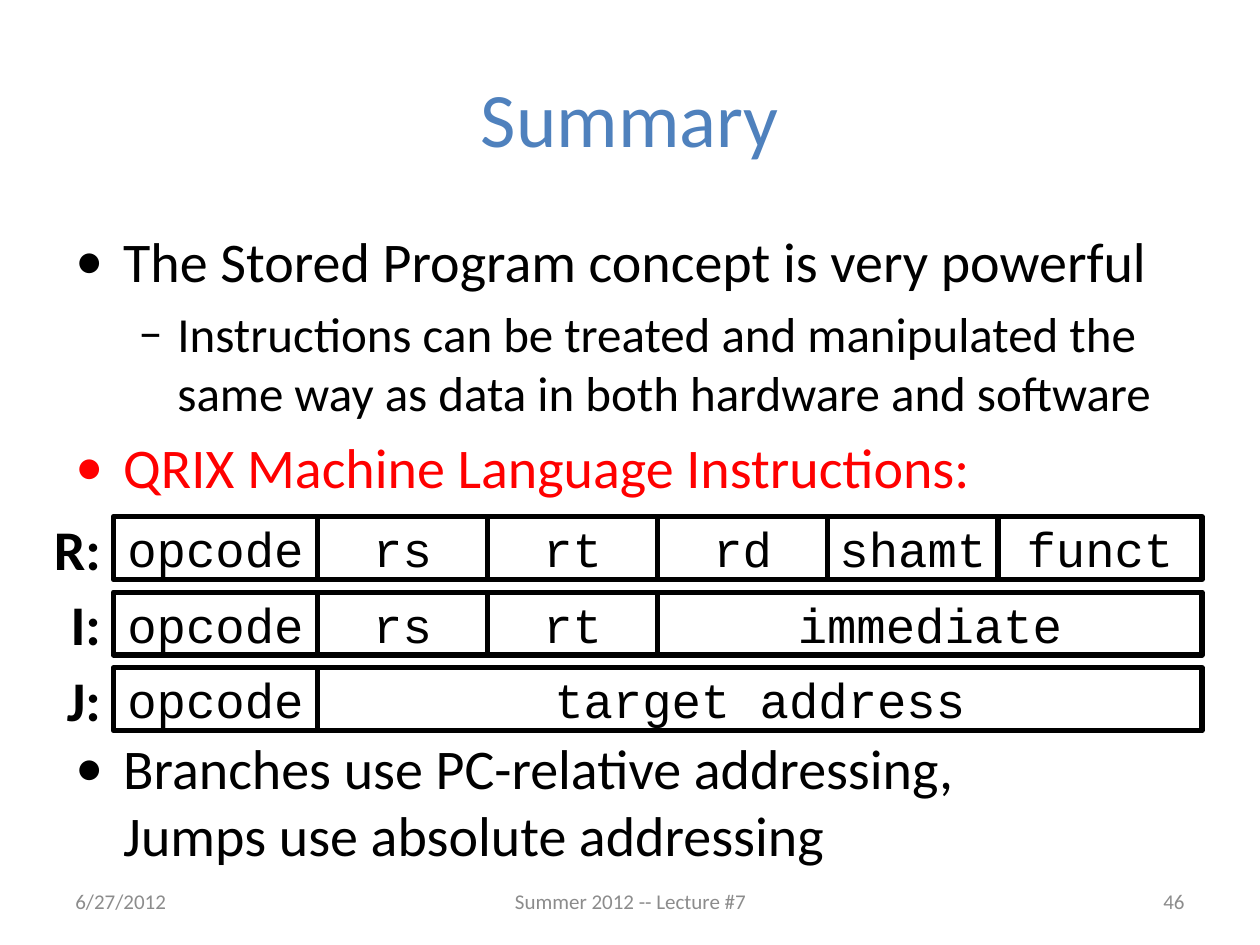
import dataclasses

import lxml.etree
import pptx
import pptx.dml.color
import pptx.enum.shapes
import pptx.enum.text
import pptx.oxml.ns
import pptx.util

ALIGN = pptx.enum.text.PP_ALIGN
ANCHOR = pptx.enum.text.MSO_ANCHOR


@dataclasses.dataclass(frozen=True)
class Theme:
    text_font: str = "Calibri"
    code_font: str = "Courier New"
    title_color: str = "4F81BD"
    text_color: str = "000000"
    accent_color: str = "FF0000"
    footer_color: str = "8C8C8C"
    title_size: int = 44
    body_size: int = 32
    sub_size: int = 28
    footer_size: int = 12
    border: int = 3


class SlideBuilder:
    """Places elements on a grid of 200 columns by 150 rows."""

    COLUMNS, ROWS = 200, 150
    FIELD_LEFT, FIELD_TOP = 18, 82
    BIT_WIDTH, FORMAT_PITCH, FIELD_HEIGHT = 5.4, 12, 10

    def __init__(self, presentation, theme):
        self.theme = theme
        self.column = presentation.slide_width / self.COLUMNS
        self.row = presentation.slide_height / self.ROWS
        self.slide = presentation.slides.add_slide(presentation.slide_layouts[6])

    def box(self, left, top, width, height):
        return (round(left * self.column), round(top * self.row),
                round(width * self.column), round(height * self.row))

    def style(self, paragraph, size, color=None, font=None, bold=False, align=ALIGN.LEFT):
        paragraph.alignment = align
        paragraph.font.size = pptx.util.Pt(size)
        paragraph.font.name = font or self.theme.text_font
        paragraph.font.bold = bold
        paragraph.font.color.rgb = pptx.dml.color.RGBColor.from_string(
            color or self.theme.text_color)

    def text(self, text, area, size, color=None, align=ALIGN.LEFT):
        frame = self.slide.shapes.add_textbox(*self.box(*area)).text_frame
        frame.word_wrap = True
        frame.vertical_anchor = ANCHOR.MIDDLE
        frame.text = text
        self.style(frame.paragraphs[0], size, color, align=align)

    def bullets(self, items, area):
        """Each item is (text, level, color, space before in points)."""
        frame = self.slide.shapes.add_textbox(*self.box(*area)).text_frame
        frame.word_wrap = True
        levels = [("•", 0.38, 0.38, self.theme.body_size),
                  ("–", 0.81, 0.31, self.theme.sub_size)]
        for index, (text, level, color, space) in enumerate(items):
            paragraph = frame.add_paragraph() if index else frame.paragraphs[0]
            mark, margin, hanging, size = levels[level]
            paragraph.text = text
            paragraph.level = level
            paragraph.space_before = pptx.util.Pt(space)
            properties = paragraph._p.get_or_add_pPr()
            properties.set("marL", str(pptx.util.Inches(margin)))
            properties.set("indent", str(-pptx.util.Inches(hanging)))
            for tag, name, value in [("a:buFont", "typeface", self.theme.text_font),
                                     ("a:buChar", "char", mark)]:
                element = lxml.etree.SubElement(properties, pptx.oxml.ns.qn(tag))
                element.set(name, value)
            self.style(paragraph, size, color)

    def instruction_format(self, index, label, fields):
        """Draw one labelled row of (name, bits) fields, widths in scale with bits."""
        shapes = self.slide.shapes.add_group_shape().shapes
        top = self.FIELD_TOP + index * self.FORMAT_PITCH
        left = self.FIELD_LEFT
        for name, bits in fields:
            width = bits * self.BIT_WIDTH
            self.field(shapes, name, (left, top, width, self.FIELD_HEIGHT))
            left += width
        frame = shapes.add_textbox(*self.box(6, top - 0.4, 12, 10.8)).text_frame
        frame.word_wrap = False
        frame.margin_top = frame.margin_bottom = 0
        frame.text = label
        self.style(frame.paragraphs[0], self.theme.body_size, bold=True, align=ALIGN.RIGHT)

    def field(self, shapes, name, area):
        shape = shapes.add_shape(pptx.enum.shapes.MSO_SHAPE.RECTANGLE, *self.box(*area))
        shape.shadow.inherit = False
        shape.fill.background()
        shape.line.color.rgb = pptx.dml.color.RGBColor.from_string(self.theme.text_color)
        shape.line.width = pptx.util.Pt(self.theme.border)
        frame = shape.text_frame
        frame.margin_left = frame.margin_right = 0
        frame.vertical_anchor = ANCHOR.MIDDLE
        frame.text = name
        self.style(frame.paragraphs[0], self.theme.sub_size,
                   font=self.theme.code_font, align=ALIGN.CENTER)


def main():
    presentation = pptx.Presentation()
    presentation.slide_width = pptx.util.Inches(10)
    presentation.slide_height = pptx.util.Inches(7.5)
    theme = Theme()
    builder = SlideBuilder(presentation, theme)

    builder.text("Summary", (10, 6, 180, 25), theme.title_size,
                 theme.title_color, ALIGN.CENTER)
    format_gap = 133.5  # leaves room for the three instruction formats
    builder.bullets([
        ("The Stored Program concept is very powerful", 0, theme.text_color, 6.4),
        ("Instructions can be treated and manipulated the same way as data "
         "in both hardware and software", 1, theme.text_color, 5.6),
        ("QRIX Machine Language Instructions:", 0, theme.accent_color, 6.4),
        ("Branches use PC-relative addressing,\vJumps use absolute addressing",
         0, theme.text_color, format_gap),
    ], (10, 35, 180, 108))

    for text, left, width, align in [
        ("6/27/2012", 10, 46.6, ALIGN.LEFT),
        ("Summer 2012 -- Lecture #7", 68.4, 63.4, ALIGN.CENTER),
        ("46", 143.4, 46.6, ALIGN.RIGHT),
    ]:
        builder.text(text, (left, 139, width, 8), theme.footer_size,
                     theme.footer_color, align)

    opcode, rs, rt = ("opcode", 6), ("rs", 5), ("rt", 5)
    formats = [
        ("R:", [opcode, rs, rt, ("rd", 5), ("shamt", 5), ("funct", 6)]),
        ("I:", [opcode, rs, rt, ("immediate", 16)]),
        ("J:", [opcode, ("target address", 26)]),
    ]
    for index, (label, fields) in enumerate(formats):
        builder.instruction_format(index, label, fields)

    presentation.save("out.pptx")


if __name__ == "__main__":
    main()
